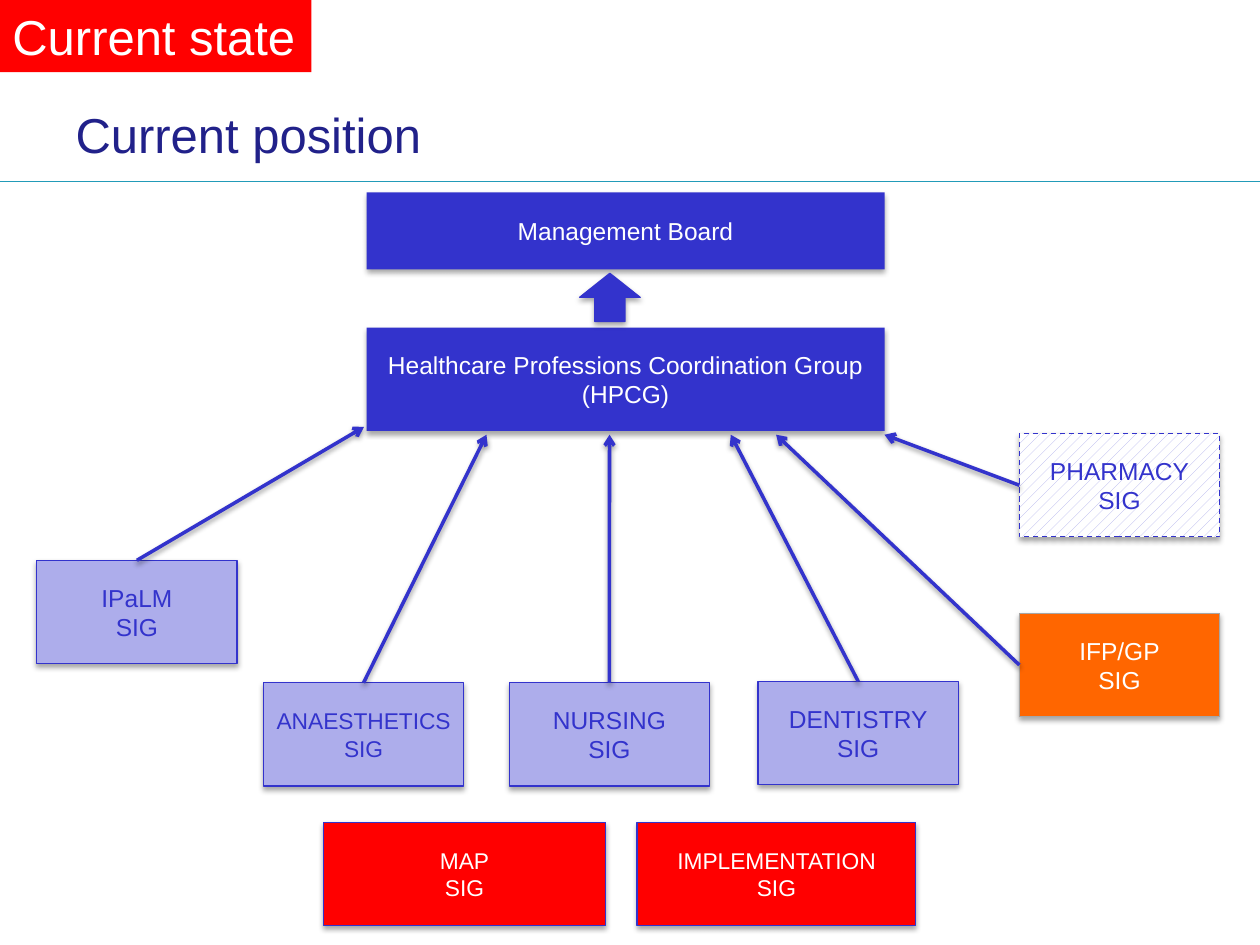
from lxml import etree
from pptx import Presentation
from pptx.dml.color import RGBColor
from pptx.enum.dml import MSO_LINE, MSO_PATTERN
from pptx.enum.shapes import MSO_CONNECTOR, MSO_SHAPE
from pptx.enum.text import MSO_ANCHOR, MSO_AUTO_SIZE, PP_ALIGN
from pptx.oxml.ns import qn
from pptx.util import Pt

RECTANGLE, UP_ARROW = MSO_SHAPE.RECTANGLE, MSO_SHAPE.UP_ARROW
STRAIGHT = MSO_CONNECTOR.STRAIGHT
DASH, DOTTED_PATTERN = MSO_LINE.DASH, MSO_PATTERN.PERCENT_20
MIDDLE, TOP = MSO_ANCHOR.MIDDLE, MSO_ANCHOR.TOP
LEFT, CENTER = PP_ALIGN.LEFT, PP_ALIGN.CENTER
NO_AUTOFIT, GROW = MSO_AUTO_SIZE.NONE, MSO_AUTO_SIZE.SHAPE_TO_FIT_TEXT

FONT = "Arial"
BLUE, PALE, RED, ORANGE = "3333CC", "ADADEB", "FF0000", "FF6600"
WHITE, GREY, NAVY, TEAL = "FFFFFF", "A6A6A6", "21218A", "229BB8"
SIG_WIDTH, SIG_HEIGHT = 114.5, 59


def color(value):
    return RGBColor.from_string(value)


def set_text(shape, text, size, text_color, align=CENTER, anchor=MIDDLE):
    frame = shape.text_frame
    frame.text = text
    frame.word_wrap = True
    frame.vertical_anchor = anchor
    for paragraph in frame.paragraphs:
        paragraph.alignment = align
        paragraph.font.size = Pt(size)
        paragraph.font.name = FONT
        paragraph.font.color.rgb = color(text_color)


def set_effects(shape, alpha=None, distance=0):
    """Give the shape a soft shadow straight below it, or none at all."""
    properties = shape._element.spPr
    for old in properties.findall(qn("a:effectLst")):
        properties.remove(old)
    effects = etree.SubElement(properties, qn("a:effectLst"))
    if alpha:
        shadow = etree.SubElement(
            effects, qn("a:outerShdw"), blurRad=str(Pt(3.1)),
            dist=str(Pt(distance)), dir="5400000", rotWithShape="0")
        black = etree.SubElement(shadow, qn("a:srgbClr"), val="000000")
        etree.SubElement(black, qn("a:alpha"), val=str(alpha * 1000))


def add_block(slide, box, fill, line=None, preset=RECTANGLE, shadow=True):
    shape = slide.shapes.add_shape(preset, *map(Pt, box))
    shape.fill.solid()
    shape.fill.fore_color.rgb = color(fill)
    if line:
        shape.line.color.rgb = color(line)
        shape.line.width = Pt(0.75)
    else:
        shape.line.fill.background()
    set_effects(shape, 35 if shadow else None, 1.8)
    return shape


def add_line(slide, start, end, line, width):
    connector = slide.shapes.add_connector(STRAIGHT, *map(Pt, start + end))
    connector.line.color.rgb = color(line)
    connector.line.width = Pt(width)
    set_effects(connector)
    return connector


def add_arrow(slide, start, end):
    arrow = add_line(slide, start, end, BLUE, 2)
    etree.SubElement(arrow.line._get_or_add_ln(), qn("a:tailEnd"), type="arrow")
    set_effects(arrow, 38, 1.6)


def add_header(slide, box):
    left, top, width, height = box
    # Rule below the title
    add_line(slide, (left, top + height), (left + width, top + height), TEAL, 0.75)

    # Title
    title = slide.shapes.title
    title.left, title.top, title.width, title.height = map(
        Pt, (left + 36, top + 56.2, 519, 40.3))
    set_text(title, "Current position", 28, NAVY, LEFT)
    frame = title.text_frame
    frame.auto_size = NO_AUTOFIT
    frame.margin_left = frame.margin_right = Pt(7.2)
    frame.margin_top = frame.margin_bottom = Pt(7.2)

    # Status tag in the corner
    tag = add_block(slide, (left, top, 178, 41.2), RED, shadow=False)
    set_text(tag, "Current state", 28, WHITE, LEFT, TOP)
    tag.text_frame.word_wrap = False
    tag.text_frame.auto_size = GROW


def add_governance(slide, box):
    left, top, width, height = box
    group_height = 59
    board = add_block(slide, (left, top, width, 44), BLUE)
    set_text(board, "Management Board", 14, WHITE)
    group = add_block(
        slide, (left, top + height - group_height, width, group_height), BLUE)
    set_text(group, "Healthcare Professions Coordination Group (HPCG)", 14, WHITE)
    add_block(slide, (left + 121.7, top + 46.2, 34.6, 27.5), BLUE, BLUE, UP_ARROW)


def add_sig(slide, box, name, size=14, fill=PALE, line=BLUE, text_color=BLUE):
    block = add_block(slide, box, fill, line)
    set_text(block, f"{name}\nSIG", size, text_color)
    return block


def add_reporting_sigs(slide):
    # Name, left, top, arrow target, text size
    below = [
        ("IPaLM", 21, 320.2, (208, 244), 14),
        ("ANAESTHETICS", 150.5, 390.2, (278, 248.4), 13),
        ("NURSING", 291, 390.2, (348.3, 248.4), 14),
        ("DENTISTRY", 433.2, 389.4, (417.6, 248.4), 14),
    ]
    for name, left, top, target, size in below:
        add_sig(slide, (left, top, SIG_WIDTH, SIG_HEIGHT), name, size)
        add_arrow(slide, (left + SIG_WIDTH / 2, top), target)

    # Groups on the right report from their left edge
    left = 582.5
    beside = [
        ("IFP/GP", 350.5, (443.5, 248.4), ORANGE, GREY, WHITE),
        ("PHARMACY", 247.8, (505.4, 248.4), WHITE, BLUE, BLUE),
    ]
    for name, top, target, fill, line, text_color in beside:
        block = add_sig(slide, (left, top, SIG_WIDTH, SIG_HEIGHT), name, 14,
                        fill, line, text_color)
        add_arrow(slide, (left, top + SIG_HEIGHT / 2), target)

    # The pharmacy group is shown as tentative
    block.fill.patterned()
    block.fill.pattern = DOTTED_PATTERN
    block.fill.fore_color.rgb = color(PALE)
    block.fill.back_color.rgb = color(WHITE)
    block.line.dash_style = DASH


def add_separate_sigs(slide, box):
    left, top, width, height = box
    gap, map_width = 18, 161.3
    second = left + map_width + gap
    add_sig(slide, (left, top, map_width, height), "MAP", 13, RED, BLUE, WHITE)
    add_sig(slide, (second, top, left + width - second, height),
            "IMPLEMENTATION", 13, RED, BLUE, WHITE)


def main():
    presentation = Presentation()
    presentation.slide_width, presentation.slide_height = Pt(720), Pt(540)
    slide = presentation.slides.add_slide(presentation.slide_layouts[5])
    add_header(slide, (0, 0, 720, 103.7))
    add_governance(slide, (209.5, 110, 296, 136.2))
    add_reporting_sigs(slide)
    add_separate_sigs(slide, (184.8, 469.8, 338.5, SIG_HEIGHT))
    presentation.save("out.pptx")


if __name__ == "__main__":
    main()
